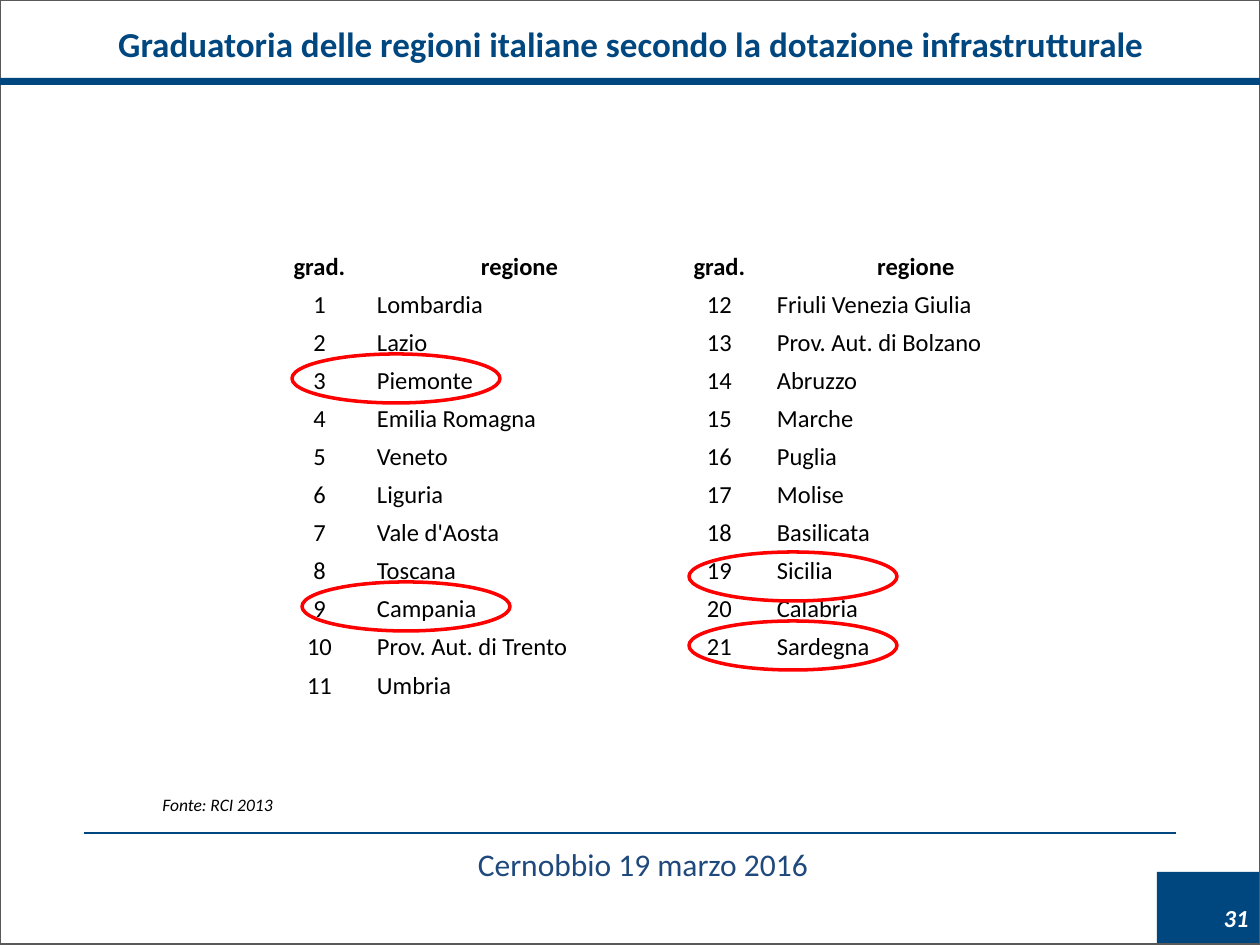
from pptx import Presentation
from pptx.dml.color import RGBColor
from pptx.enum.shapes import MSO_CONNECTOR, MSO_SHAPE
from pptx.enum.text import MSO_ANCHOR, PP_ALIGN
from pptx.oxml.ns import qn
from pptx.util import Pt
from lxml import etree

RECT, OVAL = MSO_SHAPE.RECTANGLE, MSO_SHAPE.OVAL
STRAIGHT = MSO_CONNECTOR.STRAIGHT
LEFT, CENTER = PP_ALIGN.LEFT, PP_ALIGN.CENTER
BOTTOM = MSO_ANCHOR.BOTTOM

BLUE = RGBColor(0x00, 0x46, 0x7F)
NAVY = RGBColor(0x1F, 0x49, 0x7D)
GREY = RGBColor(0x59, 0x59, 0x59)
RED = RGBColor(0xFF, 0x00, 0x00)
BLACK = RGBColor(0x00, 0x00, 0x00)
WHITE = RGBColor(0xFF, 0xFF, 0xFF)

REGIONS = [
    "Lombardia", "Lazio", "Piemonte", "Emilia Romagna", "Veneto", "Liguria",
    "Vale d'Aosta", "Toscana", "Campania", "Prov. Aut. di Trento", "Umbria",
    "Friuli Venezia Giulia", "Prov. Aut. di Bolzano", "Abruzzo", "Marche",
    "Puglia", "Molise", "Basilicata", "Sicilia", "Calabria", "Sardegna",
]
PER_COLUMN = 11
COLUMN_WIDTHS = [113, 287, 113, 280]
ROW_HEIGHT = 38
HIGHLIGHTS = [(689, 621), (292, 354), (689, 552), (302, 582)]


def px(n):
    return round(n * 914400 / 126)


def write(tf, text, size=14, color=BLACK, bold=False, italic=False, align=LEFT):
    p = tf.paragraphs[0]
    p.alignment = align
    r = p.add_run()
    r.text = text
    r.font.name = "Calibri"
    r.font.size = Pt(size)
    r.font.color.rgb = color
    r.font.bold = bold
    r.font.italic = italic


class Page:
    def __init__(self, s):
        self.s = s

    def shape(self, kind, x, y, w, h, fill=None, line=None, weight=1):
        sp = self.s.shapes.add_shape(kind, px(x), px(y), px(w), px(h))
        sp.shadow.inherit = False
        if fill is None:
            sp.fill.background()
        else:
            sp.fill.solid()
            sp.fill.fore_color.rgb = fill
        if line is None:
            sp.line.fill.background()
        else:
            sp.line.color.rgb = line
            sp.line.width = Pt(weight)

    def rule(self, x1, x2, y, color, weight):
        sp = self.s.shapes.add_connector(STRAIGHT, px(x1), px(y), px(x2), px(y))
        sp.line.color.rgb = color
        sp.line.width = Pt(weight)
        etree.SubElement(sp._element.spPr, qn("a:effectLst"))

    def text(self, x, y, w, h, text, wrap=True, **style):
        sp = self.s.shapes.add_textbox(px(x), px(y), px(w), px(h))
        sp.text_frame.word_wrap = wrap
        write(sp.text_frame, text, **style)

    def table(self, x, y, widths, row_height, rows):
        shape = self.s.shapes.add_table(
            len(rows), len(widths), px(x), px(y),
            px(sum(widths)), px(row_height * len(rows)))
        table = shape.table
        table.first_row = False
        table.horz_banding = False
        for column, width in zip(table.columns, widths):
            column.width = px(width)
        for i, row in enumerate(rows):
            table.rows[i].height = px(row_height)
            for j, value in enumerate(row):
                cell = table.cell(i, j)
                cell.fill.background()
                cell.vertical_anchor = BOTTOM
                cell.margin_left = cell.margin_right = cell.margin_top = px(1)
                cell.margin_bottom = 0
                centred = i == 0 or j % 2 == 0
                write(cell.text_frame, value, bold=i == 0,
                      align=CENTER if centred else LEFT)


def ranking_rows():
    ranked = [(str(n), name) for n, name in enumerate(REGIONS, 1)]
    ranked += [("", "")] * (2 * PER_COLUMN - len(ranked))
    pairs = zip(ranked[:PER_COLUMN], ranked[PER_COLUMN:])
    return [("grad.", "regione") * 2] + [a + b for a, b in pairs]


def main():
    prs = Presentation()
    prs.slide_width, prs.slide_height = px(1260), px(945)
    page = Page(prs.slides.add_slide(prs.slide_layouts[6]))

    page.shape(RECT, 1157, 872, 103, 73, fill=BLUE)
    page.rule(84, 1176, 833, BLUE, 0.75)
    page.shape(RECT, 0, 0, 1260, 944, line=GREY)
    page.text(1176, 897, 120, 49, "31", color=WHITE, bold=True, italic=True,
              align=CENTER)
    page.text(200, 839, 886, 58, "Cernobbio 19 marzo 2016", size=18,
              color=NAVY, align=CENTER)
    page.shape(RECT, 0, 78, 1260, 7, fill=BLUE)
    page.text(64, 16, 1134, 89,
              "Graduatoria delle regioni italiane secondo la dotazione infrastrutturale",
              size=20, color=BLUE, bold=True, align=CENTER)

    page.table(263, 244, COLUMN_WIDTHS, ROW_HEIGHT, ranking_rows())
    for x, y in HIGHLIGHTS:
        page.shape(OVAL, x, y, 208, 49, line=RED, weight=2)
    page.text(150, 788, 144, 34, "Fonte: RCI 2013", wrap=False, size=10,
              italic=True)

    prs.save("out.pptx")


if __name__ == "__main__":
    main()
